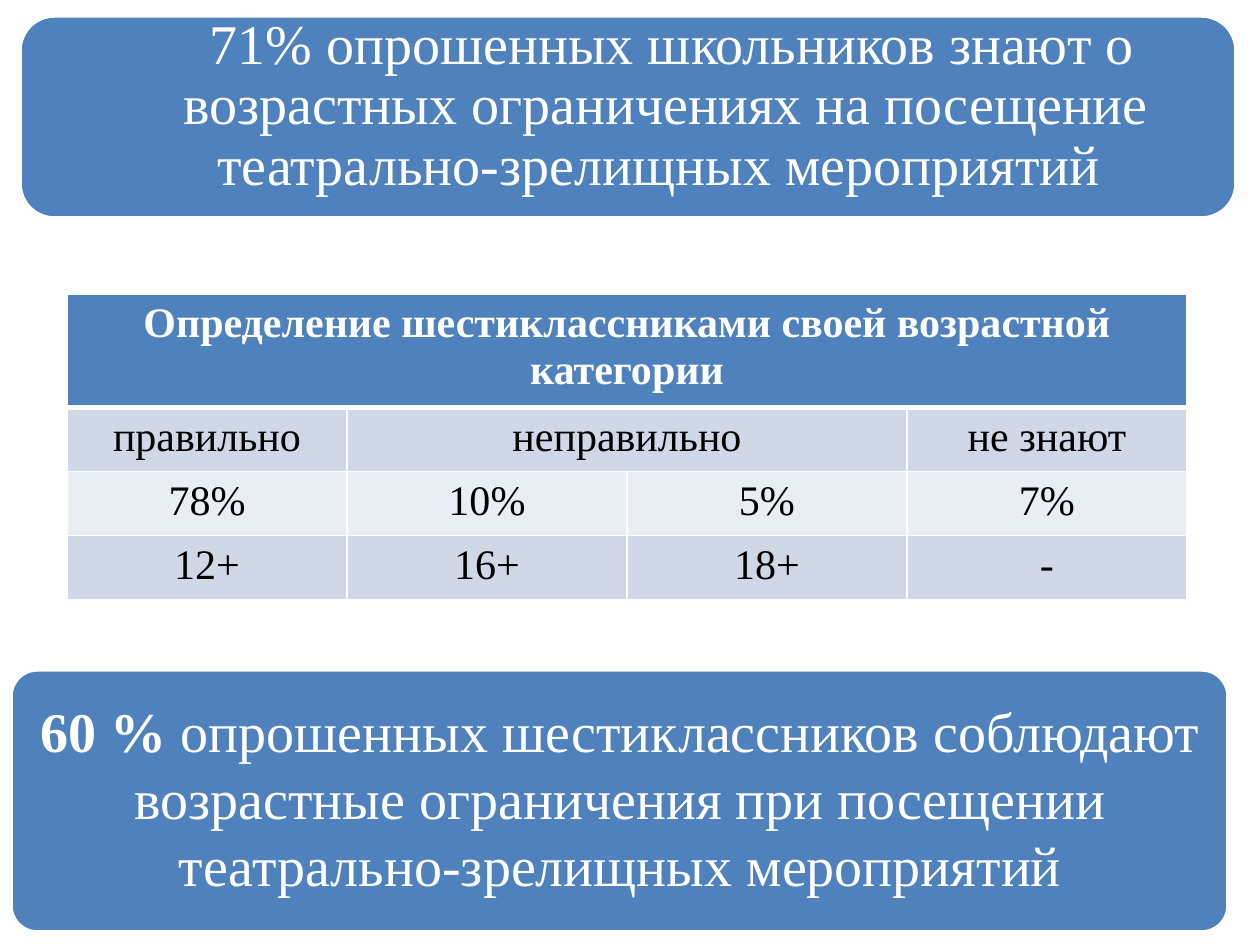
from lxml.etree import SubElement
from pptx import Presentation
from pptx.dml.color import RGBColor
from pptx.enum.shapes import MSO_SHAPE as Shape
from pptx.enum.text import MSO_ANCHOR as Anchor, PP_ALIGN as Align
from pptx.oxml.ns import qn
from pptx.util import Pt

PX = 914400 / 126
FONT = "Times New Roman"
BLUE, WHITE, BLACK = "4F81BD", "FFFFFF", "000000"
DARK, LIGHT = "D0D8E8", "E9EDF4"


def px(*nums):
    return [round(n * PX) for n in nums]


def color(code):
    return RGBColor.from_string(code)


def write(frame, runs, tint=WHITE):
    """Fill one centred paragraph with (text, size, bold) runs."""
    para = frame.paragraphs[0]
    para.alignment = Align.CENTER
    for text, size, bold in runs:
        run = para.add_run()
        run.text = text
        font = run.font
        font.name, font.size, font.bold = FONT, Pt(size), bold
        font.color.rgb = color(tint)
    return para


def panel(slide, box, round_by):
    shape = slide.shapes.add_shape(Shape.ROUNDED_RECTANGLE, *px(*box))
    shape.adjustments[0] = round_by
    shape.shadow.inherit = False
    shape.fill.solid()
    shape.fill.fore_color.rgb = color(BLUE)
    shape.line.color.rgb = color(WHITE)
    shape.line.width = Pt(2)


def label(slide, box, runs):
    frame = slide.shapes.add_textbox(*px(*box)).text_frame
    frame.word_wrap = True
    write(frame, runs)
    return frame


def border(cell, top, bottom):
    props = cell._tc.get_or_add_tcPr()
    for side, width in (("L", 1), ("R", 1), ("T", top), ("B", bottom)):
        line = SubElement(props, qn(f"a:ln{side}"), w=str(Pt(width)))
        fill = SubElement(line, qn("a:solidFill"))
        SubElement(fill, qn("a:srgbClr"), val=WHITE)


def grid(slide, left, top, width, heights, rows, fills):
    cols = len(rows[0])
    box = px(left, top, width, sum(heights))
    table = slide.shapes.add_table(len(rows), cols, *box).table
    for r, row in enumerate(rows):
        table.rows[r].height = px(heights[r])[0]
        for c, text in enumerate(row):
            cell = table.cell(r, c)
            # A thick rule parts the header from the body
            border(cell, 3 if r == 1 else 1, 3 if r == 0 else 1)
            cell.fill.solid()
            cell.fill.fore_color.rgb = color(fills[r])
            if text:
                write(cell.text_frame, [(text, 24, r == 0)],
                      BLACK if r else WHITE)
    return table


def main():
    deck = Presentation()
    deck.slide_width, deck.slide_height = px(1260, 945)
    slide = deck.slides.add_slide(deck.slide_layouts[6])

    # Panels
    panel(slide, (11, 670, 1217, 262), 0.1)
    panel(slide, (20, 16, 1216, 202), 0.17)

    # Top statement
    frame = label(slide, (92, 16, 1148, 181), [
        (" ", 28, False),
        ("71% опрошенных школьников знают о возрастных ограничениях на "
         "посещение театрально-зрелищных мероприятий ", 32, False)])
    frame.vertical_anchor = Anchor.MIDDLE
    frame.margin_left = frame.margin_right = px(15)[0]
    frame.margin_top = frame.margin_bottom = px(15)[0]
    frame.paragraphs[0].line_spacing = 0.9

    # Bottom statement
    label(slide, (20, 690, 1201, 217), [
        ("60 % ", 32, True),
        ("опрошенных шестиклассников соблюдают возрастные ограничения при "
         "посещении театрально-зрелищных мероприятий", 32, False)])

    # Survey table
    rows = [
        ["Определение шестиклассниками своей возрастной категории",
         "", "", ""],
        ["правильно", "неправильно", "", "не знают"],
        ["78%", "10%", "5%", "7%"],
        ["12+", "16+", "18+", "-"],
    ]
    table = grid(slide, 67, 294, 1120, [112, 64, 64, 64], rows,
                 [BLUE, DARK, LIGHT, DARK])
    table.cell(0, 0).merge(table.cell(0, 3))
    table.cell(1, 1).merge(table.cell(1, 2))

    deck.save("out.pptx")


if __name__ == "__main__":
    main()
